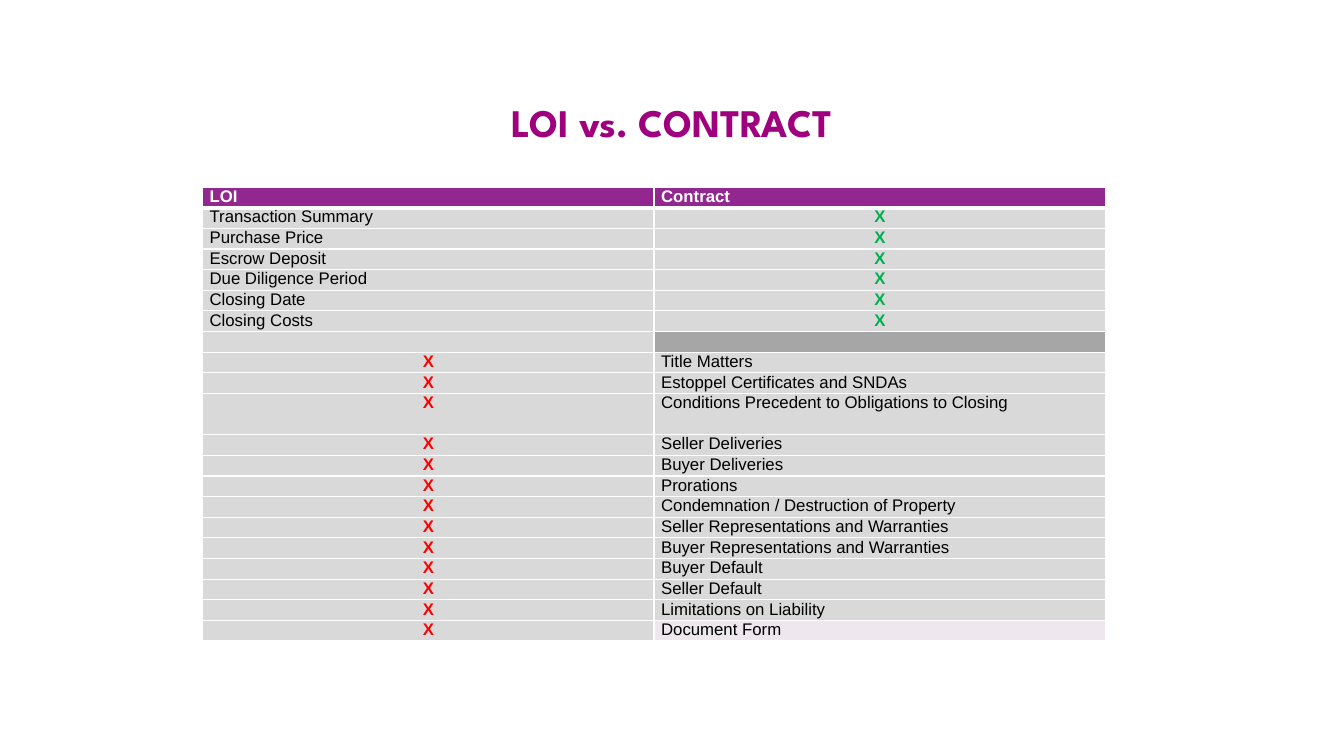
from dataclasses import dataclass

from lxml.etree import SubElement
from pptx import Presentation
from pptx.dml.color import RGBColor as Rgb
from pptx.enum.text import MSO_ANCHOR as Anchor, PP_ALIGN as Align
from pptx.oxml.ns import qn
from pptx.slide import Slide
from pptx.table import _Cell as Cell
from pptx.util import Emu, Pt

EMU_PER_PX = 4572


@dataclass(frozen=True)
class Theme:
    heading_font: str = "League Spartan"
    body_font: str = "Arial"
    heading_size: float = 27.9
    body_size: int = 12
    heading: str = "9E007E"
    header_fill: str = "92278F"
    row_fill: str = "D9D9D9"
    divider_fill: str = "A6A6A6"
    last_fill: str = "EEE8EE"
    white: str = "FFFFFF"
    black: str = "000000"
    included: str = "00B050"
    missing: str = "FF0000"


THEME = Theme()


@dataclass(frozen=True)
class Entry:
    text: str
    color: str = THEME.black
    fill: str = THEME.row_fill
    bold: bool = False
    align: Align = Align.LEFT
    bottom_border: int = 1


@dataclass(frozen=True)
class Row:
    loi: Entry
    contract: Entry
    height: int = 41


def px(length: int) -> Emu:
    return Emu(length * EMU_PER_PX)


def header(text: str) -> Entry:
    return Entry(text, THEME.white, THEME.header_fill, bold=True, bottom_border=3)


def mark(color: str) -> Entry:
    return Entry("X", color, bold=True, align=Align.CENTER)


def contract_only(text: str, height: int = 41, fill: str = THEME.row_fill) -> Row:
    return Row(mark(THEME.missing), Entry(text, fill=fill), height)


SHARED_TERMS = (
    "Transaction Summary", "Purchase Price", "Escrow Deposit",
    "Due Diligence Period", "Closing Date", "Closing Costs",
)
CONTRACT_TERMS = (
    "Seller Deliveries", "Buyer Deliveries", "Prorations",
    "Condemnation / Destruction of Property",
    "Seller Representations and Warranties",
    "Buyer Representations and Warranties",
    "Buyer Default", "Seller Default", "Limitations on Liability",
)
ROWS = [
    Row(header("LOI"), header("Contract"), 39),
    *(Row(Entry(term), mark(THEME.included)) for term in SHARED_TERMS),
    Row(Entry(""), Entry("", fill=THEME.divider_fill)),
    contract_only("Title Matters"),
    contract_only("Estoppel Certificates and SNDAs"),
    contract_only("Conditions Precedent to Obligations to Closing", height=82),
    *(contract_only(term) for term in CONTRACT_TERMS),
    contract_only("Document Form", fill=THEME.last_fill),
]


def add_borders(cell: Cell, bottom: int) -> None:
    properties = cell._tc.get_or_add_tcPr()
    widths = {"a:lnL": 1, "a:lnR": 1, "a:lnT": 1, "a:lnB": bottom}
    for position, (side, width) in enumerate(widths.items()):
        border = SubElement(properties, qn(side), w=str(Pt(width)))
        paint = SubElement(border, qn("a:solidFill"))
        SubElement(paint, qn("a:srgbClr"), val=THEME.white)
        properties.insert(position, border)


def fill_cell(cell: Cell, entry: Entry) -> None:
    cell.margin_left = cell.margin_right = px(14)
    cell.margin_top = cell.margin_bottom = 0
    cell.fill.solid()
    cell.fill.fore_color.rgb = Rgb.from_string(entry.fill)
    add_borders(cell, entry.bottom_border)
    line = cell.text_frame.paragraphs[0]
    line.alignment = entry.align
    line.font.name = THEME.body_font
    line.font.size = Pt(THEME.body_size)
    line.font.bold = entry.bold
    line.font.color.rgb = Rgb.from_string(entry.color)
    if entry.text:
        line.text = entry.text
    else:
        SubElement(line._p, qn("a:endParaRPr"), sz=str(THEME.body_size * 100))


def add_heading(slide: Slide, text: str) -> None:
    frame = slide.shapes.add_textbox(px(384), px(188), px(1898), px(202)).text_frame
    frame.word_wrap = True
    frame.vertical_anchor = Anchor.TOP
    frame.margin_top = px(18)
    heading = frame.paragraphs[0]
    heading.text = text
    heading.alignment = Align.CENTER
    heading.line_spacing = 0.9
    heading.font.name = THEME.heading_font
    heading.font.size = Pt(THEME.heading_size)
    heading.font.bold = True
    heading.font.color.rgb = Rgb.from_string(THEME.heading)


def add_comparison(slide: Slide, rows: list[Row]) -> None:
    height = sum(row.height for row in rows)
    comparison = slide.shapes.add_table(
        len(rows), 2, px(402), px(372), px(1792), px(height)
    ).table
    for index, row in enumerate(rows):
        comparison.rows[index].height = px(row.height)
        fill_cell(comparison.cell(index, 0), row.loi)
        fill_cell(comparison.cell(index, 1), row.contract)


def main() -> None:
    deck = Presentation()
    deck.slide_width, deck.slide_height = px(2667), px(1500)
    slide = deck.slides.add_slide(deck.slide_layouts[6])
    add_heading(slide, "LOI vs. CONTRACT")
    add_comparison(slide, ROWS)
    deck.save("out.pptx")


if __name__ == "__main__":
    main()
